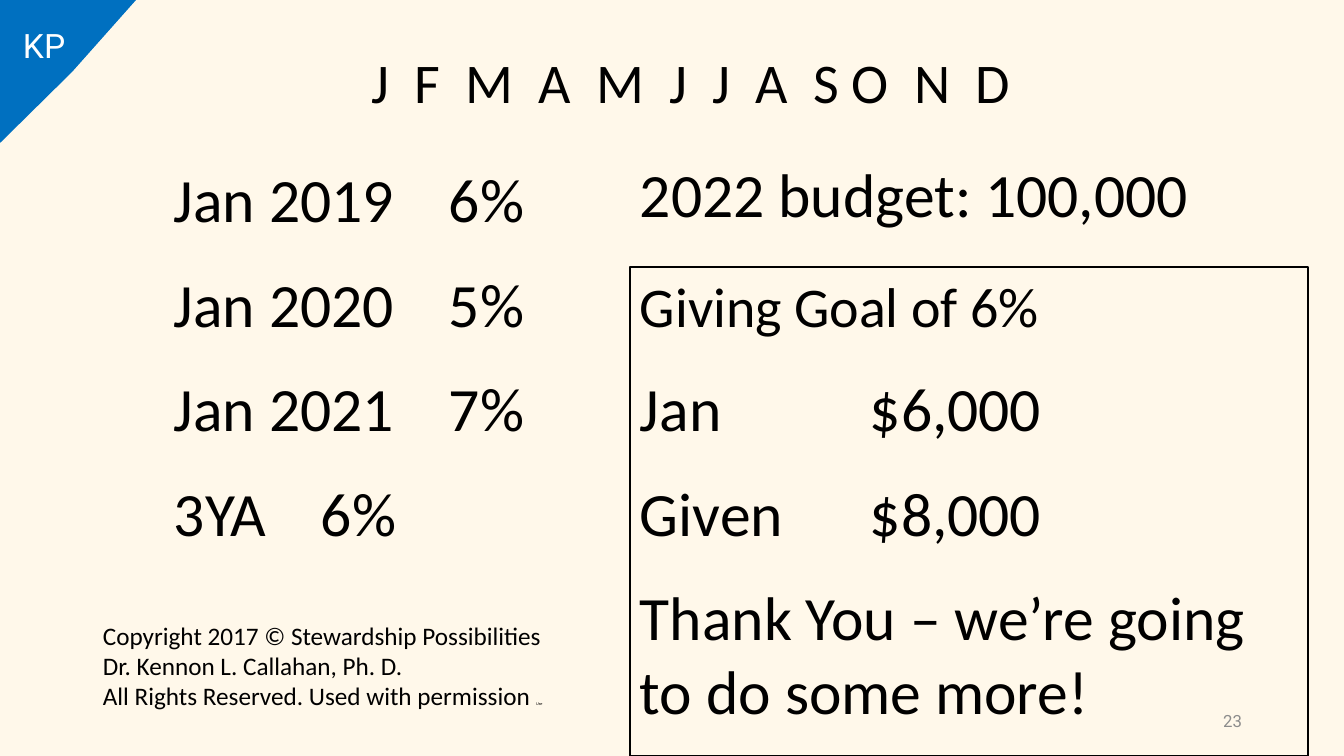
import pptx
import pptx.util
import pptx.dml.color
import pptx.enum.shapes
import pptx.enum.text
import lxml.etree

# Content
MONTHS = "J F M A M J J A S O N D".split()
MONTH_STOPS = [43, 94, 167, 225, 298, 341, 384, 442, 480, 543, 604]
GIVING_HISTORY = [("Jan 2019", "6%"), ("Jan 2020", "5%"), ("Jan 2021", "7%"), ("3YA", "6%")]
HISTORY_STOPS = [147, 275]
BUDGET = "2022 budget: 100,000"
GOAL = "Giving Goal of 6%"
GOAL_RESULTS = [("Jan", "$6,000"), ("Given", "$8,000")]
GOAL_STOPS = [230]
THANKS = "Thank You – we’re going to do some more!"
COPYRIGHT = [
    "Copyright 2017 © Stewardship Possibilities",
    "Dr. Kennon L. Callahan, Ph. D.",
    "All Rights Reserved. Used with permission ",
]
COPYRIGHT_TAIL = "Use"
MONOGRAM = "KP"
PAGE = "23"


class Theme:
    background, ink, corner = "FFF8EA", "000000", "0070C0"
    light, muted = "FFFFFF", "8C8C8C"
    body, accent = "Calibri", "Roboto"
    large, heading, label, note, page, tiny = 44, 40, 24, 18, 12, 3
    gap = 22


PX = 914400 / 100.8
WIDTH, HEIGHT = 1344, 756
ALIGN = pptx.enum.text.PP_ALIGN
ANCHOR = pptx.enum.text.MSO_ANCHOR


def px(length):
    return pptx.util.Emu(round(length * PX))


def rgb(value):
    return pptx.dml.color.RGBColor.from_string(value)


def add_tab_stops(paragraph, stops):
    properties = paragraph._p.get_or_add_pPr()
    tab_list = lxml.etree.SubElement(properties, pptx.oxml.ns.qn("a:tabLst"))
    for stop in stops:
        lxml.etree.SubElement(tab_list, pptx.oxml.ns.qn("a:tab"), pos=str(px(stop)), algn="l")


def add_run(paragraph, text, size, color, font):
    run = paragraph.add_run()
    run.text = text
    run.font.size = pptx.util.Pt(size)
    run.font.name = font
    run.font.color.rgb = rgb(color)


def write(shape, lines, size=Theme.large, first_size=None, color=Theme.ink, font=Theme.body,
          gap=0, stops=(), align=ALIGN.LEFT, anchor=ANCHOR.TOP):
    """Fill a shape with lines; a tuple is one line whose parts are set on tab stops."""
    frame = shape.text_frame
    frame.word_wrap = True
    frame.auto_size = pptx.enum.text.MSO_AUTO_SIZE.NONE
    frame.vertical_anchor = anchor
    for index, line in enumerate(lines):
        paragraph = frame.add_paragraph() if index else frame.paragraphs[0]
        paragraph.alignment = align
        paragraph.space_before = pptx.util.Pt(gap if index else 0)
        in_columns = isinstance(line, tuple)
        if in_columns:
            # A long label moves on to the next free stop
            add_tab_stops(paragraph, stops)
        text = "\t".join(line) if in_columns else line
        add_run(paragraph, text, size if index else first_size or size, color, font)
    return frame


presentation = pptx.Presentation()
presentation.slide_width, presentation.slide_height = px(WIDTH), px(HEIGHT)
slide = presentation.slides.add_slide(presentation.slide_layouts[5])
slide.background.fill.solid()
slide.background.fill.fore_color.rgb = rgb(Theme.background)


def text_box(left, top, width, height):
    return slide.shapes.add_textbox(px(left), px(top), px(width), px(height))


# Month initials as the title
months = slide.shapes.title
months.left, months.top, months.width, months.height = px(361), px(42), px(814), px(78)
write(months, [tuple(MONTHS)], size=Theme.heading, stops=MONTH_STOPS)

# January share of giving by year
write(text_box(164, 156, 394, 420), GIVING_HISTORY, gap=Theme.gap, stops=HISTORY_STOPS)

# Budget and the framed goal
write(text_box(630, 151, 603, 85), [BUDGET])
goal = slide.shapes.add_shape(
    pptx.enum.shapes.MSO_SHAPE.RECTANGLE, px(630), px(267), px(678), px(489))
goal.shadow.inherit = False
goal.fill.background()
goal.line.color.rgb = rgb(Theme.ink)
goal.line.width = pptx.util.Pt(1)
write(goal, [GOAL, *GOAL_RESULTS, THANKS], first_size=Theme.heading,
      gap=Theme.gap, stops=GOAL_STOPS)

# Copyright lines
rights = write(text_box(93, 615, 480, 102), COPYRIGHT, size=Theme.note)
add_run(rights.paragraphs[-1], COPYRIGHT_TAIL, Theme.tiny, Theme.ink, Theme.body)

# Corner flag with monogram
outline = slide.shapes.build_freeform(0, 0, scale=PX)
outline.add_line_segments([(136, 0), (72, 72), (0, 143)], close=True)
corner = outline.convert_to_shape()
corner.shadow.inherit = False
corner.fill.solid()
corner.fill.fore_color.rgb = rgb(Theme.corner)
corner.line.fill.background()
write(text_box(13, 20, 123, 51), [MONOGRAM], size=Theme.label,
      color=Theme.light, font=Theme.accent)

# Page number
write(text_box(950, 701, 302, 40), [PAGE], size=Theme.page, color=Theme.muted,
      font=Theme.accent, align=ALIGN.RIGHT, anchor=ANCHOR.MIDDLE)

presentation.save("out.pptx")
